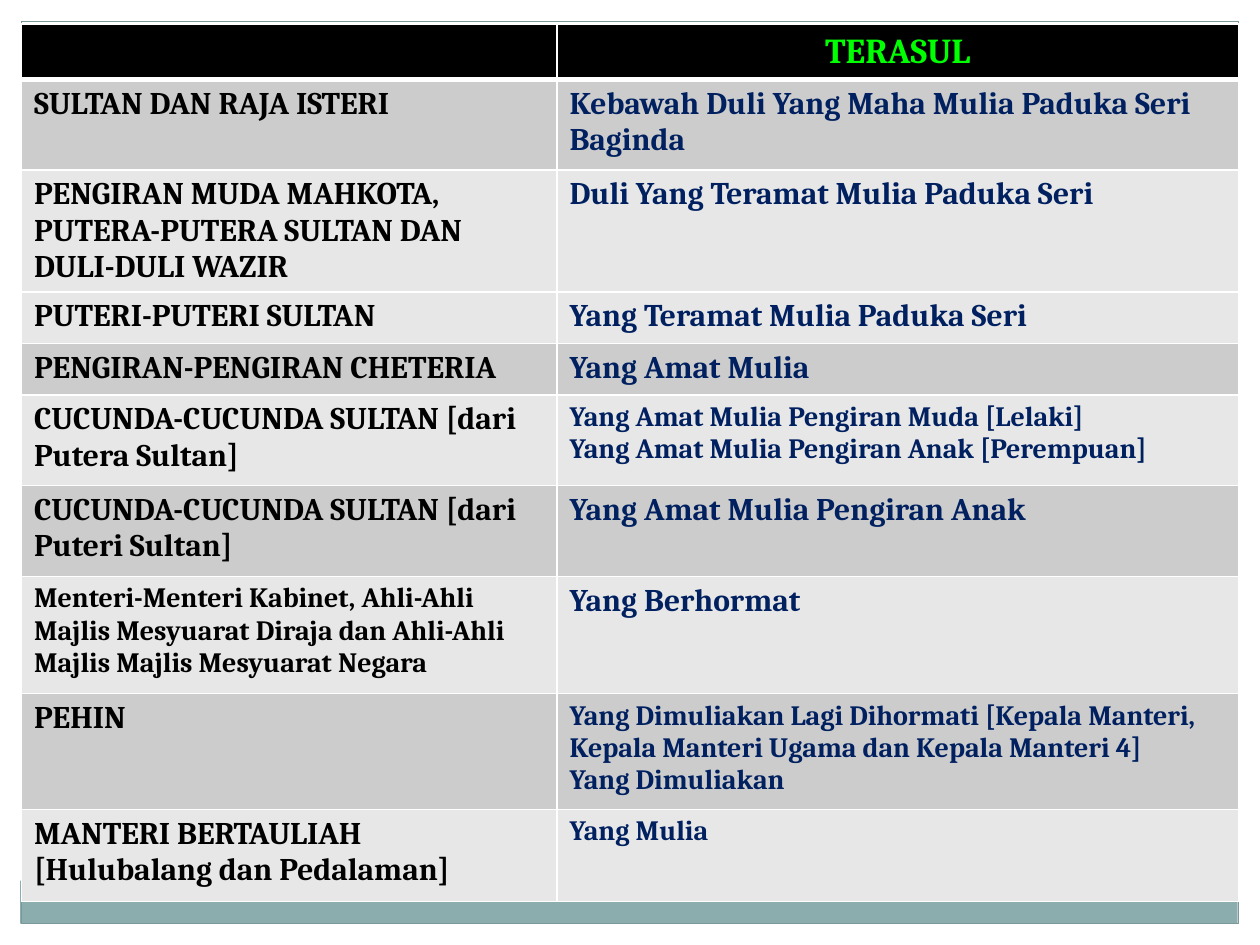
from lxml import etree
from pptx import Presentation
from pptx.dml.color import RGBColor
from pptx.enum.shapes import MSO_SHAPE
from pptx.enum.text import MSO_ANCHOR, PP_ALIGN
from pptx.oxml.ns import qn
from pptx.util import Inches, Pt

RECT = MSO_SHAPE.RECTANGLE
MIDDLE = MSO_ANCHOR.MIDDLE
CENTER = PP_ALIGN.CENTER
LIGHT, DARK = "E7E7E7", "CCCCCC"


def color(value):
    return RGBColor.from_string(value)


def add_border(cell, side, width):
    ln = etree.Element(qn("a:" + side), w=str(Pt(width)))
    fill = etree.SubElement(ln, qn("a:solidFill"))
    etree.SubElement(fill, qn("a:srgbClr"), val="FFFFFF")
    cell._tc.get_or_add_tcPr().append(ln)


prs = Presentation()
prs.slide_width = Inches(10)
prs.slide_height = Inches(7.5)
s = prs.slides.add_slide(prs.slide_layouts[6])
s.background.fill.solid()
s.background.fill.fore_color.rgb = color("C5D1D7")

# left, top, width, height, fill, line
panels = [
    (0, 7.33, 10, 0.17, "FFFFFF", None),
    (0, 0, 10, 1.52, "FFFFFF", None),
    (0, 0, 0.17, 7.5, "FFFFFF", None),
    (9.83, 0, 0.17, 7.5, "FFFFFF", None),
    (0.16, 6.99, 9.66, 0.34, "8CADAE", None),
    (0.17, 0.17, 9.66, 7.16, None, "7C999A"),
]
for *box, fill, line in panels:
    panel = s.shapes.add_shape(RECT, *[Inches(v) for v in box])
    panel.shadow.inherit = False
    if fill:
        panel.fill.solid()
        panel.fill.fore_color.rgb = color(fill)
    else:
        panel.fill.background()
    if line:
        panel.line.color.rgb = color(line)
        panel.line.width = Pt(0.75)
    else:
        panel.line.fill.background()

# height, fill, (left size, left lines), (right size, right lines)
rows = [
    (0.44, "000000", (20, []), (20, ["TERASUL"])),
    (0.72, DARK, (18, ["SULTAN DAN RAJA ISTERI"]),
     (18, ["Kebawah Duli Yang Maha Mulia Paduka Seri Baginda"])),
    (0.72, LIGHT, (18, ["PENGIRAN MUDA MAHKOTA, PUTERA-PUTERA SULTAN DAN DULI-DULI WAZIR"]),
     (18, ["Duli Yang Teramat Mulia Paduka Seri"])),
    (0.41, LIGHT, (18, ["PUTERI-PUTERI SULTAN"]), (18, ["Yang Teramat Mulia Paduka Seri"])),
    (0.41, DARK, (18, ["PENGIRAN-PENGIRAN CHETERIA"]), (18, ["Yang Amat Mulia"])),
    (0.72, LIGHT, (18, ["CUCUNDA-CUCUNDA SULTAN [dari Putera Sultan]"]),
     (16, ["Yang Amat Mulia Pengiran Muda [Lelaki]",
           "Yang Amat Mulia Pengiran Anak [Perempuan]"])),
    (0.72, DARK, (18, ["CUCUNDA-CUCUNDA SULTAN [dari Puteri Sultan]"]),
     (18, ["Yang Amat Mulia Pengiran Anak"])),
    (0.93, LIGHT, (16, ["Menteri-Menteri Kabinet, Ahli-Ahli Majlis Mesyuarat Diraja dan "
                        "Ahli-Ahli Majlis Majlis Mesyuarat Negara"]),
     (18, ["Yang Berhormat"])),
    (0.92, DARK, (18, ["PEHIN"]),
     (16, ["Yang Dimuliakan Lagi Dihormati [Kepala Manteri, Kepala Manteri Ugama "
           "dan Kepala Manteri 4]", "Yang Dimuliakan"])),
    (0.73, LIGHT, (18, ["MANTERI BERTAULIAH [Hulubalang dan Pedalaman]"]),
     (16, ["Yang Mulia"])),
]

table = s.shapes.add_table(len(rows), 2, Inches(0.17), Inches(0.19),
                           Inches(9.66), Inches(6.72)).table
table.columns[0].width = Inches(4.25)
table.columns[1].width = Inches(5.41)

for i, (height, fill, *contents) in enumerate(rows):
    table.rows[i].height = Inches(height)
    for j, (size, lines) in enumerate(contents):
        cell = table.cell(i, j)
        add_border(cell, "lnL", 1)
        add_border(cell, "lnR", 1)
        add_border(cell, "lnT", 3 if i == 1 else 1)
        add_border(cell, "lnB", 3 if i == 0 else 1)
        cell.fill.solid()
        cell.fill.fore_color.rgb = color(fill)
        if i == 0:
            cell.vertical_anchor = MIDDLE
        tf = cell.text_frame
        for n, line in enumerate(lines):
            p = tf.add_paragraph() if n else tf.paragraphs[0]
            if i == 0:
                p.alignment = CENTER
            r = p.add_run()
            r.text = line
            r.font.name = "Cambria"
            r.font.size = Pt(size)
            r.font.bold = True
            r.font.color.rgb = color("00FF00" if i == 0 else ("000000", "002060")[j])

prs.save("out.pptx")
